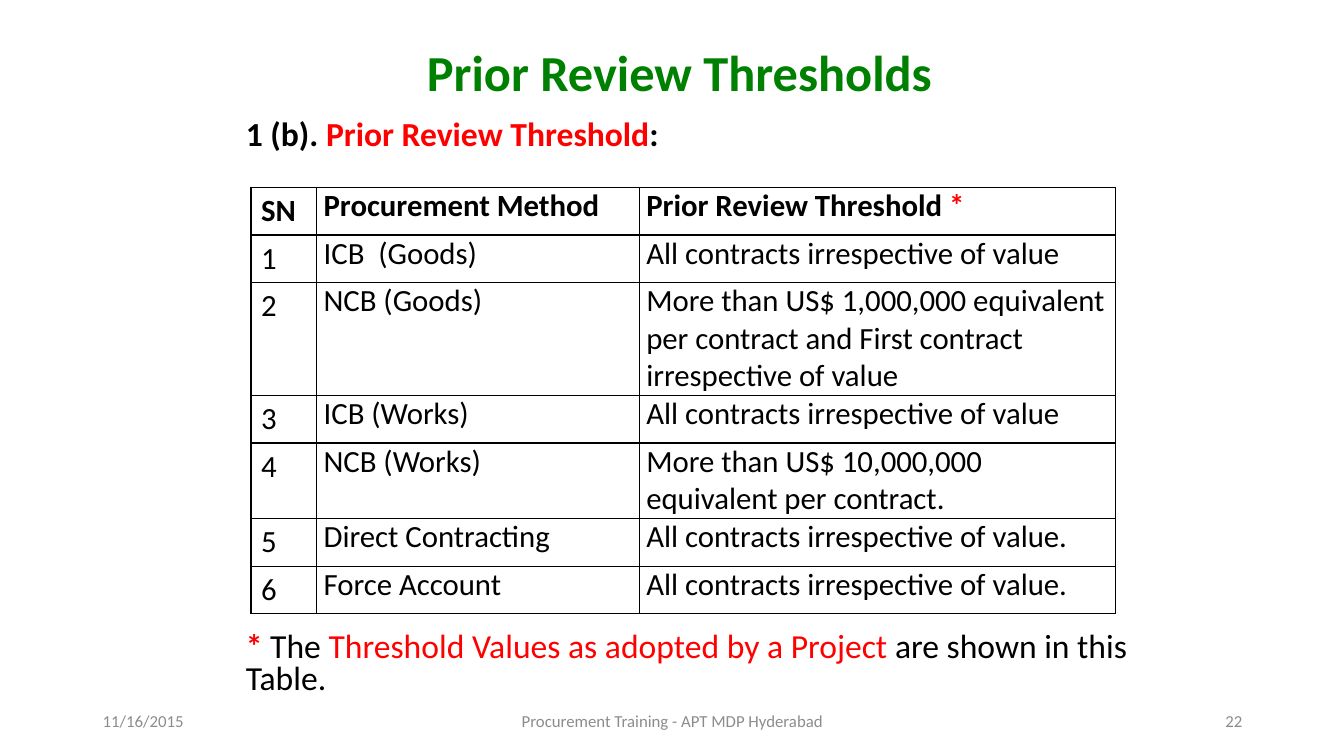
from lxml import etree
from pptx import Presentation
from pptx.dml.color import RGBColor
from pptx.enum.text import MSO_ANCHOR, MSO_AUTO_SIZE, PP_ALIGN
from pptx.oxml.ns import qn
from pptx.util import Pt

LEFT, CENTER, RIGHT = PP_ALIGN.LEFT, PP_ALIGN.CENTER, PP_ALIGN.RIGHT
TOP, MIDDLE, BOTTOM = MSO_ANCHOR.TOP, MSO_ANCHOR.MIDDLE, MSO_ANCHOR.BOTTOM
NO_AUTOFIT = MSO_AUTO_SIZE.NONE
TITLE_ONLY = 5

FONT = "Calibri"
BLACK, WHITE, RED, GREEN, GREY = "000000", "FFFFFF", "FF0000", "008000", "8C8C8C"

COLUMN_WIDTHS = [65, 320, 472]
ROW_HEIGHTS = [47, 47, 112, 47, 75, 47, 47]
HEADER = ["SN", "Procurement Method", [("Prior Review Threshold ", BLACK), ("*", RED)]]
METHODS = [
    ("ICB  (Goods)", "All contracts irrespective of value"),
    ("NCB (Goods)", "More than US$ 1,000,000 equivalent per contract "
                    "and First contract irrespective of value"),
    ("ICB (Works)", "All contracts irrespective of value"),
    ("NCB (Works)", "More than US$ 10,000,000 equivalent per contract."),
    ("Direct Contracting", "All contracts irrespective of value."),
    ("Force Account", "All contracts irrespective of value."),
]


def px(length):
    """Turn px (100 to the inch) into EMU."""
    return length * 9144


def rgb(color):
    return RGBColor.from_string(color)


class SlideBuilder:
    def __init__(self, slide):
        self.slide = slide

    def fill_text(self, frame, spans, size, color=BLACK, bold=False, align=LEFT, spacing=1.0):
        """Fill a frame with one paragraph: a string, or (text, colour[, bold]) spans."""
        para = frame.paragraphs[0]
        para.alignment, para.line_spacing = align, spacing
        font = para.font
        font.name, font.size, font.bold = FONT, Pt(size), bold
        font.color.rgb = rgb(color)
        if isinstance(spans, str):
            spans = [(spans, color)]
        for text, span_color, *span_bold in spans:
            span = para.add_run()
            span.text = text
            span.font.color.rgb = rgb(span_color)
            if span_bold:
                span.font.bold = span_bold[0]

    def place(self, box, left, top, width, height, anchor):
        box.left, box.top, box.width, box.height = map(px, (left, top, width, height))
        frame = box.text_frame
        frame.word_wrap, frame.auto_size = True, NO_AUTOFIT
        frame.vertical_anchor = anchor
        return frame

    def title(self, text, *place):
        frame = self.place(self.slide.shapes.title, *place, BOTTOM)
        self.fill_text(frame, text, 36, GREEN, True, CENTER, 0.9)

    def text(self, spans, *place, anchor=TOP, **style):
        box = self.slide.shapes.add_textbox(0, 0, 0, 0)
        self.fill_text(self.place(box, *place, anchor), spans, **style)

    def border(self, cell):
        properties = cell._tc.get_or_add_tcPr()
        for index, side in enumerate(("a:lnL", "a:lnR", "a:lnT", "a:lnB")):
            line = etree.Element(qn(side), w=str(Pt(1)))
            fill = etree.SubElement(line, qn("a:solidFill"))
            etree.SubElement(fill, qn("a:srgbClr"), val=BLACK)
            properties.insert(index, line)

    def table(self, rows, left, top, widths, heights):
        frame = self.slide.shapes.add_table(
            len(rows), len(widths), px(left), px(top), px(sum(widths)), px(sum(heights)))
        table = frame.table
        table.first_row = table.horz_banding = False
        for column, width in zip(table.columns, widths):
            column.width = px(width)
        for r, (row, height) in enumerate(zip(rows, heights)):
            table.rows[r].height = px(height)
            for c, spans in enumerate(row):
                cell = table.cell(r, c)
                cell.fill.solid()
                cell.fill.fore_color.rgb = rgb(WHITE)
                self.border(cell)
                if c > 0:
                    cell.margin_left = cell.margin_right = px(7)
                    cell.margin_top = cell.margin_bottom = 0
                self.fill_text(cell.text_frame, spans, 22, bold=r == 0)


def main():
    deck = Presentation()
    deck.slide_width, deck.slide_height = px(1333), px(750)
    page = SlideBuilder(deck.slides.add_slide(deck.slide_layouts[TITLE_ONLY]))

    page.title("Prior Review Thresholds", 249, 36, 850, 71)
    page.text([("1 (b). ", BLACK), ("Prior Review Threshold", RED), (":", BLACK)],
              234, 115, 898, 50, size=24, bold=True, spacing=0.8)
    rows = [HEADER] + [(str(n), *method) for n, method in enumerate(METHODS, 1)]
    page.table(rows, 249, 186, COLUMN_WIDTHS, ROW_HEIGHTS)
    page.text([("* ", RED, True), ("The ", BLACK),
               ("Threshold Values as adopted by a Project ", RED),
               ("are shown in this Table.", BLACK)],
              234, 623, 898, 75, size=24, spacing=0.8)

    for text, left, width, align in (
            ("11/16/2015", 92, 300, LEFT),
            ("Procurement Training - APT MDP Hyderabad", 442, 450, CENTER),
            ("22", 942, 300, RIGHT)):
        page.text(text, left, 695, width, 40, anchor=MIDDLE, size=12, color=GREY, align=align)

    deck.save("out.pptx")


if __name__ == "__main__":
    main()
